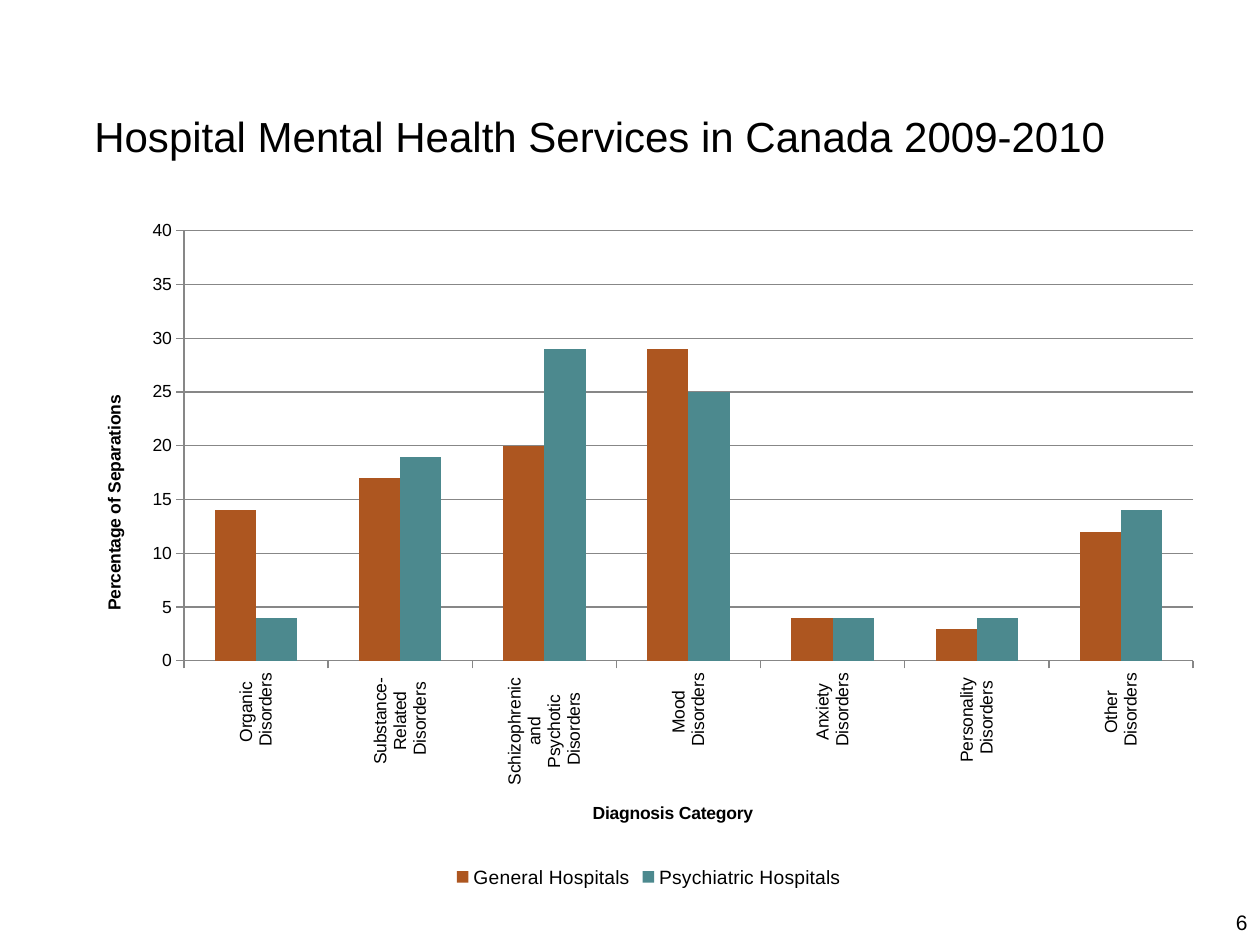
from lxml import etree
from pptx import Presentation
from pptx.chart.data import CategoryChartData
from pptx.dml.color import RGBColor
from pptx.enum.chart import XL_CHART_TYPE, XL_LEGEND_POSITION, XL_TICK_MARK
from pptx.enum.text import MSO_ANCHOR, PP_ALIGN
from pptx.oxml.ns import qn
from pptx.util import Pt

COLUMNS = XL_CHART_TYPE.COLUMN_CLUSTERED
LEGEND_BOTTOM = XL_LEGEND_POSITION.BOTTOM
TICK_OUT, TICK_NONE = XL_TICK_MARK.OUTSIDE, XL_TICK_MARK.NONE
LEFT, RIGHT = PP_ALIGN.LEFT, PP_ALIGN.RIGHT
TOP, MIDDLE = MSO_ANCHOR.TOP, MSO_ANCHOR.MIDDLE
UPRIGHT = "-5400000"

CATEGORIES = [
    "Organic \nDisorders",
    "Substance- \nRelated \nDisorders",
    "Schizophrenic \nand \nPsychotic \nDisorders",
    "Mood \nDisorders",
    "Anxiety \nDisorders",
    "Personality \nDisorders",
    "Other \nDisorders",
]
# Name, colour, percentages
SERIES = [
    ("General Hospitals", "AD5620", (14, 17, 20, 29, 4, 3, 12)),
    ("Psychiatric Hospitals", "4C898E", (4, 19, 29, 25, 4, 4, 14)),
]
PLOT_LAYOUT = {"x": 0.09, "y": 0.03, "w": 0.89, "h": 0.63}


def color(hex_value):
    return RGBColor.from_string(hex_value)


class SlideBuilder:
    font_name = "Arial"
    text_color = "000000"
    line_color = "878787"

    def __init__(self, slide):
        self.slide = slide

    def style_font(self, font, size, bold=False):
        formats = {"name": self.font_name, "size": Pt(size), "bold": bold}
        for name, value in formats.items():
            setattr(font, name, value)
        font.color.rgb = color(self.text_color)

    def style_line(self, line):
        line.color.rgb = color(self.line_color)
        line.width = Pt(0.75)

    def text(self, box, content, size, align=LEFT, anchor=TOP):
        shape = self.slide.shapes.add_textbox(*map(Pt, box))
        frame = shape.text_frame
        frame.word_wrap = True
        frame.vertical_anchor = anchor
        paragraph = frame.paragraphs[0]
        paragraph.alignment = align
        run = paragraph.add_run()
        run.text = content
        self.style_font(run.font, size)

    def axis(self, axis, title, title_rotation="0"):
        formats = {"major_tick_mark": TICK_OUT, "minor_tick_mark": TICK_NONE}
        for name, value in formats.items():
            setattr(axis, name, value)
        self.style_line(axis.format.line)
        self.style_font(axis.tick_labels.font, 10)
        frame = axis.axis_title.text_frame
        run = frame.paragraphs[0].add_run()
        run.text = title
        self.style_font(run.font, 10, bold=True)
        frame._txBody.find(qn("a:bodyPr")).set("rot", title_rotation)

    def plot_layout(self, chart):
        plot_area = chart._chartSpace.chart.plotArea
        layout = plot_area.find(qn("c:layout"))
        if layout is None:
            layout = etree.Element(qn("c:layout"))
            plot_area.insert(0, layout)
        manual = etree.SubElement(layout, qn("c:manualLayout"))
        settings = {"layoutTarget": "inner", "xMode": "edge", "yMode": "edge"}
        for name, value in (settings | PLOT_LAYOUT).items():
            etree.SubElement(manual, qn(f"c:{name}")).set("val", str(value))

    def column_chart(self, box, categories, series_rows):
        data = CategoryChartData(number_format="#,##0")
        data.categories = categories
        for name, _, values in series_rows:
            data.add_series(name, values)
        frame = self.slide.shapes.add_chart(COLUMNS, *map(Pt, box), data)
        chart = frame.chart
        chart.has_title = False
        self.style_font(chart.font, 10)

        # Columns
        plot = chart.plots[0]
        formats = {"gap_width": 150, "overlap": 0, "vary_by_categories": False}
        for name, value in formats.items():
            setattr(plot, name, value)
        for series, (_, fill, _) in zip(plot.series, series_rows):
            series.format.fill.solid()
            series.format.fill.fore_color.rgb = color(fill)

        # Axes
        category_axis, value_axis = chart.category_axis, chart.value_axis
        self.axis(category_axis, "Diagnosis Category")
        label_body = category_axis._element.find(qn("c:txPr")).find(qn("a:bodyPr"))
        label_body.set("rot", UPRIGHT)
        label_body.set("vert", "horz")
        self.axis(value_axis, "Percentage of Separations", UPRIGHT)
        formats = {"minimum_scale": 0, "maximum_scale": 40, "major_unit": 5,
                   "has_major_gridlines": True}
        for name, value in formats.items():
            setattr(value_axis, name, value)
        value_axis.tick_labels.number_format = "#,##0"
        value_axis.tick_labels.number_format_is_linked = False
        self.style_line(value_axis.major_gridlines.format.line)

        # Legend
        chart.has_legend = True
        chart.legend.position = LEGEND_BOTTOM
        chart.legend.include_in_layout = False
        self.style_font(chart.legend.font, 11)
        self.plot_layout(chart)


def main():
    presentation = Presentation()
    presentation.slide_width, presentation.slide_height = Pt(720), Pt(540)
    slide = presentation.slides.add_slide(presentation.slide_layouts[6])
    builder = SlideBuilder(slide)

    # Title
    builder.text((46.8, 41.8, 601.2, 72),
                 "Hospital Mental Health Services in Canada 2009-2010",
                 24, anchor=MIDDLE)
    # Chart
    builder.column_chart((46.8, 120.2, 648, 390.2), CATEGORIES, SERIES)
    # Page number
    builder.text((642.2, 516.2, 77.8, 23.8), "6", 12, align=RIGHT)

    presentation.save("out.pptx")


if __name__ == "__main__":
    main()
